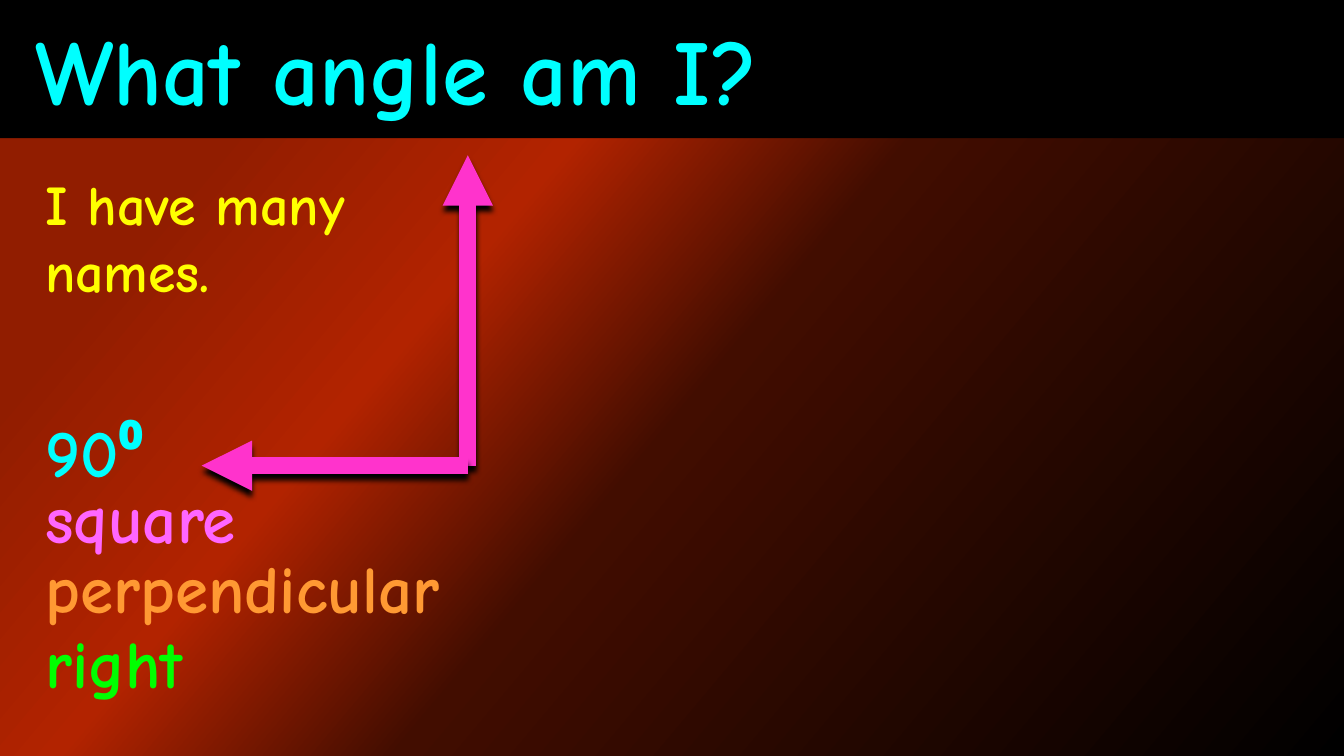
from lxml import etree
from pptx import Presentation
from pptx.dml.color import RGBColor
from pptx.enum.shapes import MSO_CONNECTOR, MSO_SHAPE
from pptx.enum.text import MSO_ANCHOR, MSO_AUTO_SIZE, PP_ALIGN
from pptx.oxml import parse_xml
from pptx.oxml.ns import nsdecls, qn
from pptx.util import Inches, Pt

RECTANGLE = MSO_SHAPE.RECTANGLE
STRAIGHT = MSO_CONNECTOR.STRAIGHT
TOP = MSO_ANCHOR.TOP
LEFT = PP_ALIGN.LEFT
NO_AUTOSIZE = MSO_AUTO_SIZE.NONE

BLACK = RGBColor(0x00, 0x00, 0x00)
CYAN = RGBColor(0x00, 0xFF, 0xFF)
YELLOW = RGBColor(0xFF, 0xFF, 0x00)
PINK = RGBColor(0xFF, 0x66, 0xFF)
ORANGE = RGBColor(0xFF, 0x99, 0x33)
GREEN = RGBColor(0x00, 0xFF, 0x00)
MAGENTA = RGBColor(0xFF, 0x33, 0xCC)
BACKGROUND_STOPS = [
    (17, RGBColor(0x91, 0x1D, 0x00)),
    (35, RGBColor(0xB2, 0x23, 0x00)),
    (52, RGBColor(0x42, 0x0D, 0x00)),
    (100, BLACK),
]


class AngleSlide:
    font_name = "Comic Neue"
    arrow_width = Pt(12)

    def __init__(self, deck):
        self.page = deck.slides.add_slide(deck.slide_layouts[5])

    def background(self, stops, clockwise_angle):
        fill = self.page.background.fill
        fill.gradient()
        fill.gradient_angle = 360 - clockwise_angle
        stop_list = self.page.element.find(".//" + qn("a:gsLst"))
        for old_stop in list(stop_list):
            stop_list.remove(old_stop)
        for percent, color in stops:
            stop = etree.SubElement(stop_list, qn("a:gs"), pos=str(percent * 1000))
            etree.SubElement(stop, qn("a:srgbClr"), val=str(color))

    def band(self, width, height, color):
        band = self.page.shapes.add_shape(RECTANGLE, 0, 0, width, height)
        band.shadow.inherit = False
        band.fill.solid()
        band.fill.fore_color.rgb = color
        band.line.fill.background()
        self.page.shapes.element.insert(2, band.element)

    def set_text(self, box, text, size, color, wrap=True):
        frame = box.text_frame
        frame.text = text
        frame.word_wrap = wrap
        frame.auto_size = NO_AUTOSIZE
        frame.vertical_anchor = TOP
        para = frame.paragraphs[0]
        para.alignment = LEFT
        para.font.name = self.font_name
        para.font.size = Pt(size)
        para.font.bold = True
        para.font.color.rgb = color

    def title(self, text, left, top, width, height, size, color):
        box = self.page.shapes.title
        box.left, box.top = Inches(left), Inches(top)
        box.width, box.height = Inches(width), Inches(height)
        self.set_text(box, text, size, color, wrap=False)

    def text(self, text, left, top, width, height, size, color):
        box = self.page.shapes.add_textbox(
            Inches(left), Inches(top), Inches(width), Inches(height)
        )
        self.set_text(box, text, size, color)

    def arrow(self, tip, corner, color):
        points = [Inches(value) for value in (*tip, *corner)]
        arrow = self.page.shapes.add_connector(STRAIGHT, *points)
        arrow.line.color.rgb = color
        arrow.line.width = self.arrow_width
        properties = arrow.element.spPr
        outline = properties.find(qn("a:ln"))
        etree.SubElement(outline, qn("a:headEnd"), type="triangle")
        properties.append(parse_xml(
            f'<a:effectLst {nsdecls("a")}>'
            f'<a:outerShdw blurRad="{Pt(4)}" dist="{Pt(4)}" dir="5400000" rotWithShape="0">'
            f'<a:srgbClr val="{BLACK}"/></a:outerShdw></a:effectLst>'
        ))


def main():
    deck = Presentation()
    deck.slide_width = Inches(13.33)
    deck.slide_height = Inches(7.5)

    slide = AngleSlide(deck)
    slide.background(BACKGROUND_STOPS, 40)
    slide.band(deck.slide_width, Inches(1.37), BLACK)
    slide.title("What angle am I?", 0.25, 0.08, 8.78, 1.21, 66, CYAN)
    slide.text("I have many names.", 0.35, 1.63, 3.29, 2.12, 40, YELLOW)

    corner = (4.64, 4.62)
    for tip in [(4.64, 1.54), (2, 4.62)]:
        slide.arrow(tip, corner, MAGENTA)

    names = [
        ("90⁰", 4.02, 3.29, CYAN),
        ("square", 4.68, 3.29, PINK),
        ("perpendicular", 5.37, 4.6, ORANGE),
        ("right", 6.11, 4.6, GREEN),
    ]
    for name, top, width, color in names:
        slide.text(name, 0.35, top, width, 0.91, 48, color)

    deck.save("out.pptx")


if __name__ == "__main__":
    main()
